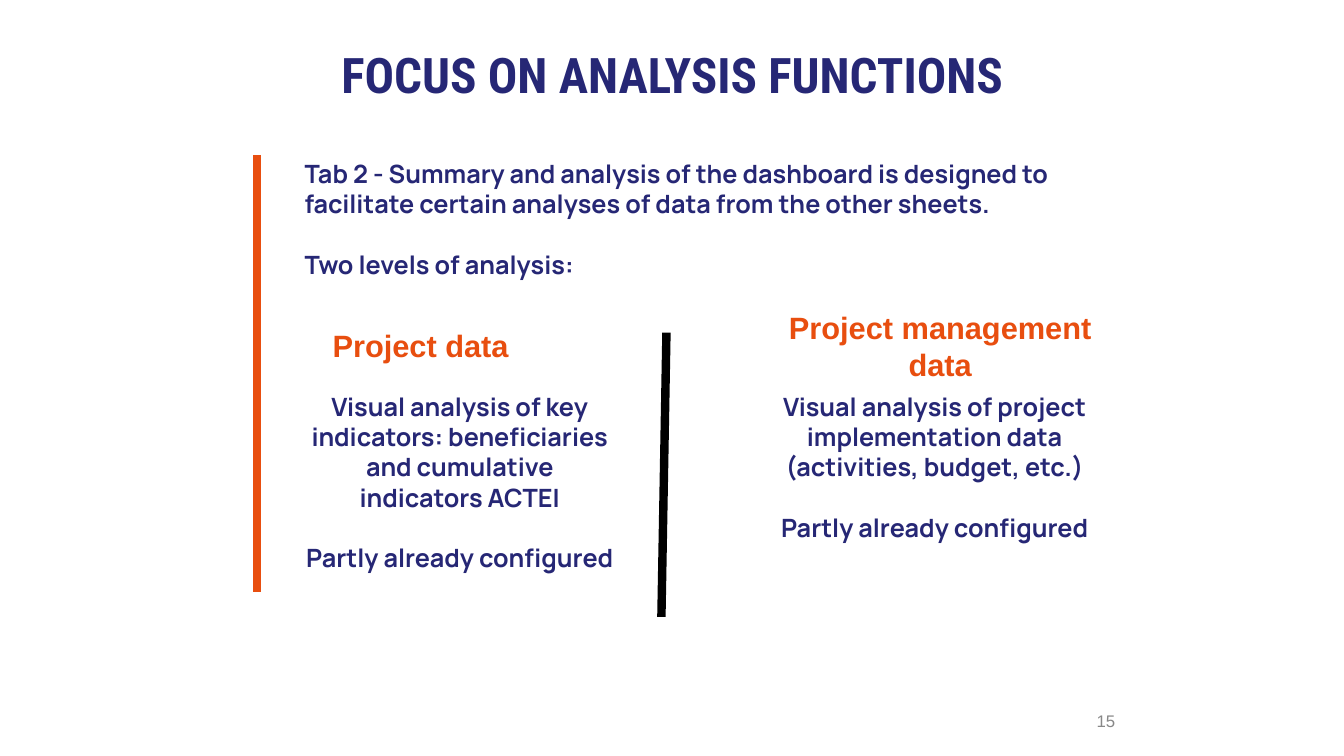
from lxml import etree
from pptx import Presentation
from pptx.dml.color import RGBColor
from pptx.enum import shapes, text
from pptx.oxml.ns import qn
from pptx.util import Inches, Pt

NAVY, ORANGE, GREY, BLACK = "262775", "E84E0F", "888888", "000000"
LEFT, CENTER, RIGHT = text.PP_ALIGN.LEFT, text.PP_ALIGN.CENTER, text.PP_ALIGN.RIGHT
TOP, MIDDLE = text.MSO_ANCHOR.TOP, text.MSO_ANCHOR.MIDDLE


def color(value):
    return RGBColor.from_string(value)


def write(sp, box, lines, font, size, fill, align=LEFT, bold=True, inset=0.1, anchor=TOP):
    sp.left, sp.top, sp.width, sp.height = [Inches(v) for v in box]
    tf = sp.text_frame
    tf.word_wrap = True
    tf.auto_size = text.MSO_AUTO_SIZE.NONE
    tf.vertical_anchor = anchor
    tf.margin_left = tf.margin_right = Inches(0.1)
    tf.margin_top = tf.margin_bottom = Inches(inset)
    for i, line in enumerate(lines):
        p = tf.add_paragraph() if i else tf.paragraphs[0]
        p.text = line
        p.alignment = align
        p.space_before = Pt(21.7 if i else 0)
        r = p.runs[0]
        r.font.name = font
        r.font.size = Pt(size)
        r.font.bold = bold
        r.font.color.rgb = color(fill)


prs = Presentation()
prs.slide_width, prs.slide_height = Inches(13.33), Inches(7.5)
s = prs.slides.add_slide(prs.slide_layouts[1])

write(s.shapes.title, (1.67, 0.34, 10, 0.79), ["FOCUS ON ANALYSIS FUNCTIONS"],
      "Roboto Condensed", 35, NAVY, CENTER)

body = s.placeholders[1]
write(body, (2.92, 1.52, 8.2, 1.57),
      ["Tab 2 - Summary and analysis of the dashboard is designed to "
       "facilitate certain analyses of data from the other sheets.",
       "Two levels of analysis:"],
      "Manrope", 18, NAVY, inset=0.05)
for p in body.text_frame.paragraphs:
    pPr = p._p.get_or_add_pPr()
    pPr.set("marL", "0")
    pPr.set("indent", "0")
    etree.SubElement(pPr, qn("a:buNone"))

lines = [(2.55, 1.54, 2.55, 5.87, ORANGE), (6.61, 3.3, 6.56, 6.12, BLACK)]
for x1, y1, x2, y2, fill in lines:
    line = s.shapes.add_connector(shapes.MSO_CONNECTOR.STRAIGHT,
                                  Inches(x1), Inches(y1), Inches(x2), Inches(y2))
    line.line.color.rgb = color(fill)
    line.line.width = Pt(6)
    etree.SubElement(line._element.spPr, qn("a:effectLst"))

levels = [
    ("Project data", (3.2, 3.14, 2.72, 0.59), LEFT, (2.92, 3.78, 3.28, 2.02),
     "Visual analysis of key indicators: beneficiaries and cumulative indicators ACTEI"),
    ("Project management data", (7.63, 2.96, 3.39, 0.59), CENTER, (7.63, 3.78, 3.28, 1.72),
     "Visual analysis of project implementation data (activities, budget, etc.)"),
]
for heading, heading_box, align, detail_box, detail in levels:
    write(s.shapes.add_textbox(0, 0, 0, 0), heading_box, [heading], "Arial", 22, ORANGE, align)
    write(s.shapes.add_textbox(0, 0, 0, 0), detail_box, [detail, "Partly already configured"],
          "Manrope", 18, NAVY, CENTER)

write(s.shapes.add_textbox(0, 0, 0, 0), (8.83, 6.95, 2.33, 0.4), ["15"],
      "Arial", 12, GREY, RIGHT, bold=False, inset=0.05, anchor=MIDDLE)

prs.save("out.pptx")
